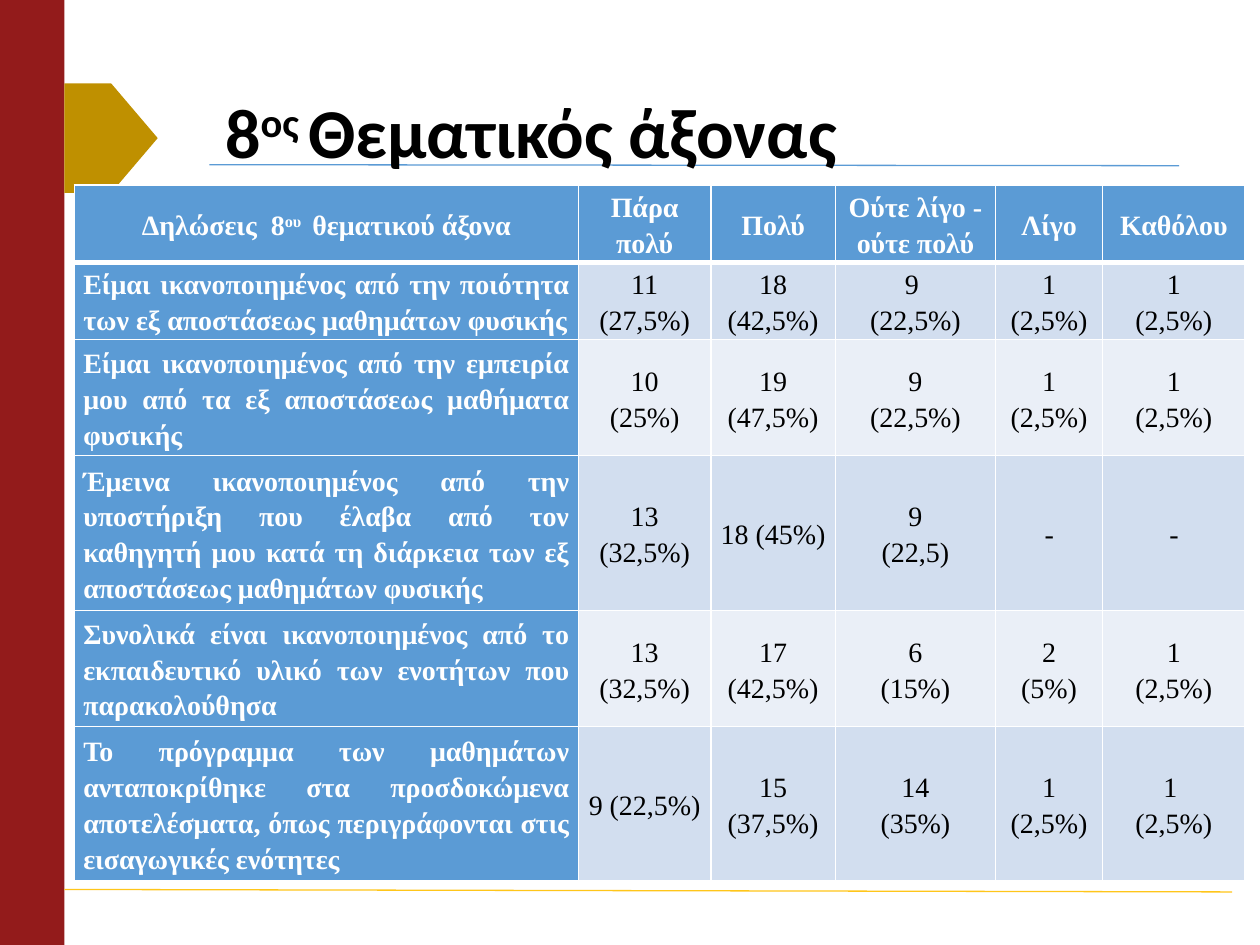
from lxml import etree
from pptx import Presentation
from pptx.dml.color import RGBColor
from pptx.enum import shapes, text
from pptx.oxml import ns
from pptx.util import Cm, Pt

WHITE = RGBColor(0xFF, 0xFF, 0xFF)
BLACK = RGBColor(0, 0, 0)
RED = RGBColor(0x93, 0x1B, 0x1B)
OCHRE = RGBColor(0xBF, 0x90, 0x00)
YELLOW = RGBColor(0xFF, 0xC6, 0x1A)
BLUE = RGBColor(0x5B, 0x9B, 0xD5)
BANDS = [RGBColor(0xD2, 0xDE, 0xEF), RGBColor(0xEA, 0xEF, 0xF7)]

HEADERS = ["Πάρα πολύ", "Πολύ", "Ούτε λίγο - ούτε πολύ", "Λίγο", "Καθόλου"]
ROWS = [
    ["Είμαι ικανοποιημένος από την ποιότητα των εξ αποστάσεως μαθημάτων φυσικής",
     "11 (27,5%)", "18 (42,5%)", "9 \n(22,5%)", "1 (2,5%)", "1\n(2,5%)"],
    ["Είμαι ικανοποιημένος από την εμπειρία μου από τα εξ αποστάσεως μαθήματα φυσικής",
     "10\n(25%)", "19 (47,5%)", "9\n(22,5%)", "1 (2,5%)", "1\n(2,5%)"],
    ["Έμεινα ικανοποιημένος από την υποστήριξη που έλαβα από τον καθηγητή μου "
     "κατά τη διάρκεια των εξ αποστάσεως μαθημάτων φυσικής",
     "13 (32,5%)", "18 (45%)", "9\n(22,5)", "-", "-"],
    ["Συνολικά είναι ικανοποιημένος από το εκπαιδευτικό υλικό των ενοτήτων που παρακολούθησα",
     "13\n(32,5%)", "17\n(42,5%)", "6\n(15%)", "2\n(5%)", "1\n(2,5%)"],
    ["Το πρόγραμμα των μαθημάτων ανταποκρίθηκε στα προσδοκώμενα αποτελέσματα, "
     "όπως περιγράφονται στις εισαγωγικές ενότητες",
     "9 (22,5%)", "15 (37,5%)", "14\n(35%)", "1 (2,5%)", "1 \n(2,5%)"],
]
COLUMN_WIDTHS = [10.16, 2.67, 2.51, 3.23, 2.16, 2.87]
ROW_HEIGHTS = [1.55, 1.55, 2.34, 3.12, 2.34, 3.12]


def add_ordinal(para, before, raised, after):
    for words in (before, raised, after):
        span = para.add_run()
        span.text = words
        if words == raised:
            span.font._element.set("baseline", "30000")


def set_borders(cell, widths):
    properties = cell._tc.get_or_add_tcPr()
    for index, (side, width) in enumerate(widths.items()):
        line = etree.Element(ns.qn(f"a:ln{side}"), w=str(Pt(width)))
        fill = etree.SubElement(line, ns.qn("a:solidFill"))
        etree.SubElement(fill, ns.qn("a:srgbClr"), val=str(WHITE))
        properties.insert(index, line)


deck = Presentation()
deck.slide_width, deck.slide_height = Cm(25.4), Cm(19.05)
page = deck.slides.add_slide(deck.slide_layouts[6])

for kind, left, top, width, height, color in [
    (shapes.MSO_SHAPE.RECTANGLE, 0, 0, 1.3, 19.05, RED),
    (shapes.MSO_SHAPE.PENTAGON, 1.3, 1.68, 1.88, 2.21, OCHRE),
]:
    shape = page.shapes.add_shape(kind, Cm(left), Cm(top), Cm(width), Cm(height))
    shape.shadow.inherit = False
    shape.fill.solid()
    shape.fill.fore_color.rgb = color
    shape.line.fill.background()
    if kind == shapes.MSO_SHAPE.PENTAGON:
        shape.adjustments[0] = 0.5

for x1, y1, x2, y2, color in [
    (4.22, 3.32, 23.77, 3.34, BLUE),
    (1.3, 17.93, 24.84, 17.98, YELLOW),
]:
    rule = page.shapes.add_connector(
        shapes.MSO_CONNECTOR.STRAIGHT, Cm(x1), Cm(y1), Cm(x2), Cm(y2))
    rule.line.color.rgb = color
    rule.line.width = Pt(0.75)
    etree.SubElement(rule._element.spPr, ns.qn("a:effectLst"))

title = page.shapes.add_textbox(Cm(4.29), Cm(1.93), Cm(21.1), Cm(1.6))
title.text_frame.word_wrap = True
title.text_frame.vertical_anchor = text.MSO_ANCHOR.MIDDLE
para = title.text_frame.paragraphs[0]
para.line_spacing = 0.9
add_ordinal(para, "8", "ος ", "Θεματικός άξονας")
for span in para.runs:
    span.font.name = "Calibri"
    span.font.size = Pt(40)
    span.font.bold = True
    span.font.color.rgb = BLACK

table = page.shapes.add_table(
    len(ROW_HEIGHTS), len(COLUMN_WIDTHS), Cm(1.5), Cm(3.73),
    Cm(sum(COLUMN_WIDTHS)), Cm(sum(ROW_HEIGHTS))).table
for column, width in zip(table.columns, COLUMN_WIDTHS):
    column.width = Cm(width)
for row, height in zip(table.rows, ROW_HEIGHTS):
    row.height = Cm(height)

for r, words_in_row in enumerate([[""] + HEADERS] + ROWS):
    for c, words in enumerate(words_in_row):
        cell = table.cell(r, c)
        heading = r == 0 or c == 0
        if r == 0 and c == 0:
            add_ordinal(cell.text_frame.paragraphs[0],
                        "Δηλώσεις  8", "ου ", " θεματικού άξονα")
        else:
            cell.text_frame.text = words
        cell.vertical_anchor = text.MSO_ANCHOR.MIDDLE
        cell.margin_left = cell.margin_right = Cm(0.18)
        cell.margin_top = cell.margin_bottom = 0
        cell.fill.solid()
        cell.fill.fore_color.rgb = BLUE if heading else BANDS[(r - 1) % 2]
        set_borders(cell, {"L": 1, "R": 1, "T": 3 if r == 1 else 1, "B": 3 if r == 0 else 1})
        for para in cell.text_frame.paragraphs:
            para.line_spacing = 1.15
            para.alignment = (text.PP_ALIGN.JUSTIFY if r > 0 and c == 0
                              else text.PP_ALIGN.CENTER)
            for span in para.runs:
                span.font.name = "Times New Roman"
                span.font.size = Pt(16)
                span.font.bold = heading
                span.font.color.rgb = WHITE if heading else BLACK

deck.save("out.pptx")
